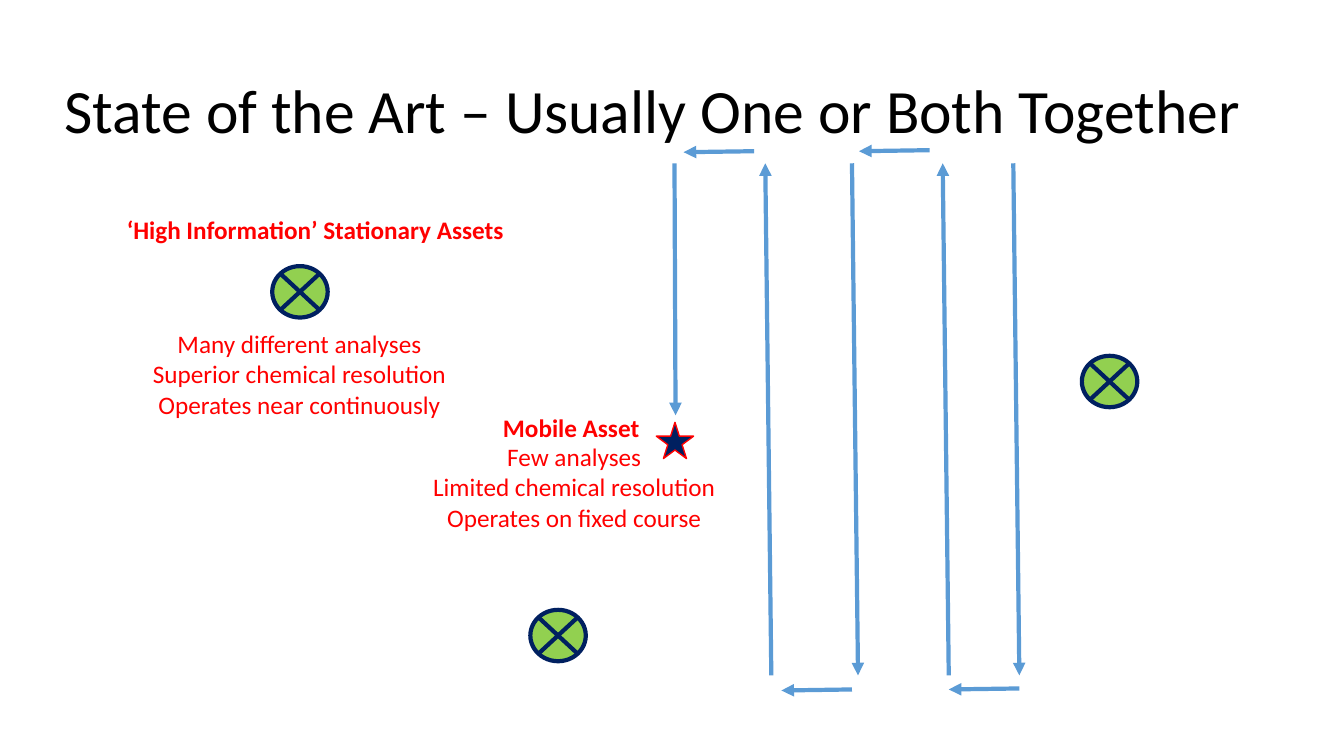
from lxml import etree
from pptx import Presentation
from pptx.dml.color import RGBColor
from pptx.enum.shapes import MSO_CONNECTOR, MSO_SHAPE
from pptx.enum.text import MSO_ANCHOR, MSO_AUTO_SIZE, PP_ALIGN
from pptx.oxml.ns import qn
from pptx.util import Inches, Pt

STRAIGHT = MSO_CONNECTOR.STRAIGHT
JUNCTION = MSO_SHAPE.FLOWCHART_SUMMING_JUNCTION
STAR = MSO_SHAPE.STAR_5_POINT
MIDDLE = MSO_ANCHOR.MIDDLE
FIT_TEXT = MSO_AUTO_SIZE.SHAPE_TO_FIT_TEXT
LEFT, CENTER = PP_ALIGN.LEFT, PP_ALIGN.CENTER

BLACK = RGBColor(0x00, 0x00, 0x00)
RED = RGBColor(0xFF, 0x00, 0x00)
NAVY = RGBColor(0x00, 0x20, 0x60)
GREEN = RGBColor(0x92, 0xD0, 0x50)
BLUE = RGBColor(0x5B, 0x9B, 0xD5)

FONT = "Calibri"
CELL = Inches(0.1)  # the slide is a grid of 133.3 columns by 75 rows

STATIONARY_ASSETS = [(27, 26.4), (107.3, 35.3), (52.6, 60.5)]
LANE_TOP, LANE_BOTTOM, LANE_LEAN = 16.2, 67, 0.6
LANES_DOWN = [100.5, 84.5]
LANES_UP = [93.5, 75.9]
TURNS = [(101.1, 68.3), (92.2, 14.9), (84.5, 68.4), (74.8, 15)]
TURN_LENGTH, TURN_DROP = 7, 0.1


def cells(*counts):
    return [round(count * CELL) for count in counts]


def format_text(frame, size, color, bold=False, align=LEFT):
    for paragraph in frame.paragraphs:
        paragraph.alignment = align
        for run in paragraph.runs:
            run.font.name = FONT
            run.font.size = Pt(size)
            run.font.bold = bold
            run.font.color.rgb = color


def set_title(slide, text):
    title = slide.shapes.title
    title.left, title.top, title.width, title.height = cells(5.4, 4, 118.8, 14.5)
    frame = title.text_frame
    frame.text = text
    frame.word_wrap = True
    frame.vertical_anchor = MIDDLE
    frame.paragraphs[0].line_spacing = 0.9
    format_text(frame, 44, BLACK)


def add_label(slide, box, lines, bold=False, align=LEFT):
    frame = slide.shapes.add_textbox(*cells(*box)).text_frame
    frame.word_wrap = False
    frame.auto_size = FIT_TEXT
    frame.text = "\n".join(lines)
    format_text(frame, 18, RED, bold, align)


def add_marker(slide, preset, box, fill, outline, weight):
    marker = slide.shapes.add_shape(preset, *cells(*box))
    marker.shadow.inherit = False
    marker.fill.solid()
    marker.fill.fore_color.rgb = fill
    marker.line.color.rgb = outline
    marker.line.width = Pt(weight)


def add_course_leg(slide, start, end):
    """Draw one leg of the mobile asset's course, with its arrowhead at end."""
    leg = slide.shapes.add_connector(STRAIGHT, *cells(*start, *end))
    leg.line.color.rgb = BLUE
    leg.line.width = Pt(3)
    etree.SubElement(leg.line._get_or_add_ln(), qn("a:tailEnd"), type="triangle")
    etree.SubElement(leg._element.spPr, qn("a:effectLst"))


def add_course(slide):
    for x in LANES_DOWN:
        add_course_leg(slide, (x, LANE_TOP), (x + LANE_LEAN, LANE_BOTTOM))
    for x in LANES_UP:
        add_course_leg(slide, (x + LANE_LEAN, LANE_BOTTOM), (x, LANE_TOP))
    add_course_leg(slide, (66.9, LANE_TOP), (67, 41.2))
    for x, y in TURNS:
        add_course_leg(slide, (x, y), (x - TURN_LENGTH, y + TURN_DROP))


def main():
    deck = Presentation()
    deck.slide_width, deck.slide_height = cells(133.3, 75)
    slide = deck.slides.add_slide(deck.slide_layouts[5])

    set_title(slide, "State of the Art – Usually One or Both Together")
    for x, y in STATIONARY_ASSETS:
        add_marker(slide, JUNCTION, (x, y, 5.5, 5.1), GREEN, NAVY, 3)
    add_label(slide, (11.6, 20.8, 39.7, 4),
              ["‘High Information’ Stationary Assets"], bold=True)
    add_marker(slide, STAR, (65.1, 41.9, 3.7, 3.6), NAVY, RED, 1)
    add_course(slide)
    add_label(slide, (14, 32.1, 31.4, 10.1),
              ["Many different analyses", "Superior chemical resolution",
               "Operates near continuously"], align=CENTER)
    add_label(slide, (48.9, 40.4, 15.6, 4), ["Mobile Asset"], bold=True)
    add_label(slide, (41.8, 43.3, 30.3, 10.1),
              ["Few analyses", "Limited chemical resolution",
               "Operates on fixed course"], align=CENTER)
    deck.save("out.pptx")


if __name__ == "__main__":
    main()
